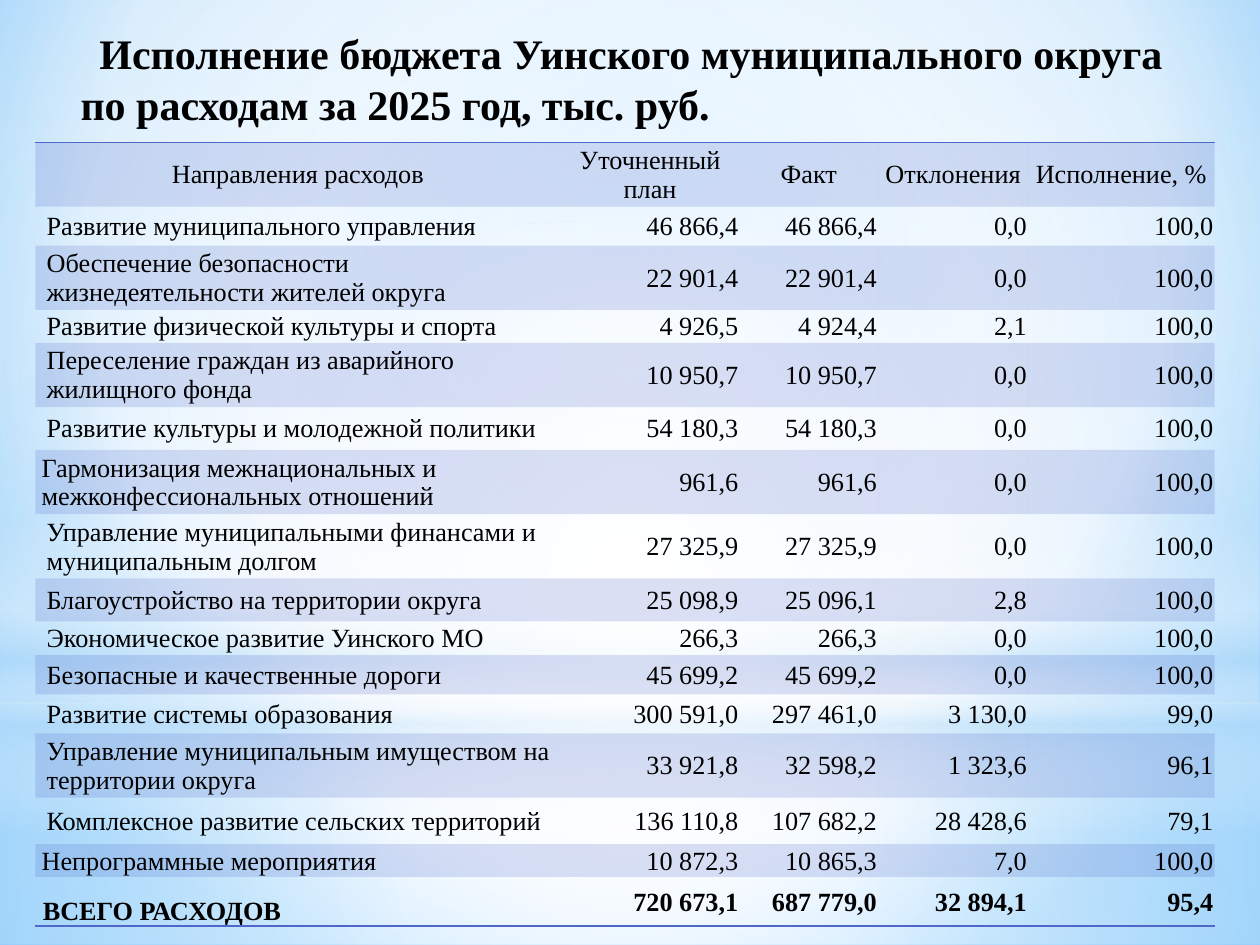
from pptx import Presentation
from pptx.dml.color import RGBColor
from pptx.enum import shapes, text
from pptx.oxml import parse_xml
from pptx.oxml.ns import nsdecls
from pptx.util import Inches, Pt

HEAD = ["Направления расходов", "Уточненный план", "Факт", "Отклонения", "Исполнение, %"]
# height, label indent, label, plan, fact, deviation, percent
ROWS = [
    (0.31, 0.08, "Развитие муниципального управления", "46 866,4", "46 866,4", "0,0", "100,0"),
    (0.51, 0.08, "Обеспечение безопасности жизнедеятельности жителей округа",
     "22 901,4", "22 901,4", "0,0", "100,0"),
    (0.26, 0.08, "Развитие физической культуры и спорта", "4 926,5", "4 924,4", "2,1", "100,0"),
    (0.51, 0.08, "Переселение граждан из аварийного жилищного фонда",
     "10 950,7", "10 950,7", "0,0", "100,0"),
    (0.34, 0.08, "Развитие культуры и молодежной политики", "54 180,3", "54 180,3", "0,0", "100,0"),
    (0.51, 0.04, "Гармонизация межнациональных и межконфессиональных отношений",
     "961,6", "961,6", "0,0", "100,0"),
    (0.51, 0.08, "Управление муниципальными финансами и муниципальным долгом",
     "27 325,9", "27 325,9", "0,0", "100,0"),
    (0.34, 0.08, "Благоустройство на территории округа", "25 098,9", "25 096,1", "2,8", "100,0"),
    (0.27, 0.08, "Экономическое развитие Уинского МО", "266,3", "266,3", "0,0", "100,0"),
    (0.31, 0.08, "Безопасные и качественные дороги", "45 699,2", "45 699,2", "0,0", "100,0"),
    (0.31, 0.08, "Развитие системы образования", "300 591,0", "297 461,0", "3 130,0", "99,0"),
    (0.51, 0.08, "Управление муниципальным имуществом на территории округа",
     "33 921,8", "32 598,2", "1 323,6", "96,1"),
    (0.37, 0.08, "Комплексное развитие сельских территорий",
     "136 110,8", "107 682,2", "28 428,6", "79,1"),
    (0.24, 0.04, "Непрограммные мероприятия", "10 872,3", "10 865,3", "7,0", "100,0"),
    (0.39, 0.05, "ВСЕГО РАСХОДОВ", "720 673,1", "687 779,0", "32 894,1", "95,4"),
]
COLS = [4.17, 1.42, 1.1, 1.19, 1.48]
CENTER = (50, 50, 50, 50)


def color(code):
    return RGBColor.from_string(code)


def tint(code, alpha=100):
    return f'<a:srgbClr val="{code}"><a:alpha val="{alpha * 1000}"/></a:srgbClr>'


def gradient(stops, focus=None):
    """Radial fill around focus (left, top, right, bottom %), or top-down without it."""
    marks = "".join(f'<a:gs pos="{pos * 1000}">{tint(*hue)}</a:gs>' for pos, *hue in stops)
    if focus:
        sides = " ".join(f'{side}="{val * 1000}"' for side, val in zip("ltrb", focus))
        way = f'<a:path path="circle"><a:fillToRect {sides}/></a:path>'
    else:
        way = '<a:lin ang="5400000" scaled="0"/>'
    return parse_xml(f'<a:gradFill {nsdecls("a")} rotWithShape="1">'
                     f'<a:gsLst>{marks}</a:gsLst>{way}</a:gradFill>')


def swap(node, fill):
    """Put fill in place of a solid fill."""
    node.getparent().replace(node, fill)


class Page:
    font, ink, blue = "Times New Roman", "000000", "4E67C8"

    def __init__(self, slide):
        self.slide = slide

    def backdrop(self, stops, focus):
        self.slide.background.fill.solid()
        swap(self.slide._element.xpath(".//p:bg//a:solidFill")[0], gradient(stops, focus))

    def glow(self, kind, top, height, stops, focus=None):
        shape = self.slide.shapes.add_shape(kind, 0, Inches(top), Inches(10), Inches(height))
        shape.shadow.inherit = False
        shape.line.fill.background()
        shape.fill.solid()
        swap(shape._element.xpath("p:spPr/a:solidFill")[0], gradient(stops, focus))

    def style(self, para, size, bold=False):
        font = para.runs[0].font
        font.name, font.size, font.bold = self.font, Pt(size), bold
        font.color.rgb = color(self.ink)

    def indent(self, para, left, first=0):
        props = para._p.get_or_add_pPr()
        props.set("marL", str(Inches(left)))
        props.set("indent", str(Inches(first)))

    def title(self, words):
        box = self.slide.shapes.add_textbox(Inches(0.51), Inches(0.13), Inches(9), Inches(1.02))
        frame = box.text_frame
        frame.word_wrap = True
        frame.margin_left, frame.margin_top = Inches(0.13), Inches(0.09)
        frame.text = words
        para = frame.paragraphs[0]
        self.indent(para, 0, 0.15)
        self.style(para, 24, True)

    def border(self, cell, side):
        line = parse_xml(f'<a:{side} {nsdecls("a")} w="{Pt(1)}"><a:solidFill>'
                         f'{tint(self.blue)}</a:solidFill></a:{side}>')
        cell._tc.get_or_add_tcPr().insert(0, line)

    def cell(self, cell, words, align, band, bold):
        cell.margin_left = cell.margin_right = cell.margin_top = Inches(0.01)
        cell.margin_bottom = 0
        cell.vertical_anchor = text.MSO_ANCHOR.MIDDLE
        cell.text_frame.text = words
        para = cell.text_frame.paragraphs[0]
        para.alignment = align
        self.style(para, 15, bold)
        if band:
            cell.fill.solid()
            cell.fill.fore_color.rgb = color(self.blue)
            swap(cell._tc.tcPr.xpath("a:solidFill/a:srgbClr")[0],
                 parse_xml(tint(self.blue, 20).replace("<a:srgbClr", f'<a:srgbClr {nsdecls("a")}')))
        else:
            cell.fill.background()

    def table(self, left, top, cols, head, rows):
        lines = [(0.51, 0, *head), *rows]
        last = len(lines) - 1
        grid = self.slide.shapes.add_table(
            len(lines), len(cols), Inches(left), Inches(top),
            Inches(sum(cols)), Inches(sum(line[0] for line in lines))).table
        grid.first_row = grid.horz_banding = False
        plain = "{2D5ABB26-0587-4C30-8999-92F81FD0307C}"
        grid._tbl.tblPr.xpath("a:tableStyleId")[0].text = plain
        for col, width in zip(grid.columns, cols):
            col.width = Inches(width)
        for i, (height, inset, *words) in enumerate(lines):
            grid.rows[i].height = Inches(height)
            for j, word in enumerate(words):
                cell = grid.cell(i, j)
                align = (text.PP_ALIGN.CENTER if i == 0
                         else text.PP_ALIGN.RIGHT if j else text.PP_ALIGN.LEFT)
                self.cell(cell, word, align, i % 2 == 0, i == last)
                if i in (0, last):
                    self.border(cell, "lnB" if i else "lnT")
            if i:
                self.indent(grid.cell(i, 0).text_frame.paragraphs[0], inset)
        grid.cell(last, 0).vertical_anchor = text.MSO_ANCHOR.BOTTOM


def main():
    deck = Presentation()
    deck.slide_width, deck.slide_height = Inches(10), Inches(7.5)
    page = Page(deck.slides.add_slide(deck.slide_layouts[6]))
    rect, oval = shapes.MSO_SHAPE.RECTANGLE, shapes.MSO_SHAPE.OVAL
    white, sky = "FFFFFF", "B4DCFA"

    page.backdrop([(0, "9ED5FF"), (69, white), (100, "5BB9FF")], (20, 10, 20, 60))
    page.glow(rect, 5.58, 1.92, [(0, white, 91), (37, white, 76), (100, sky, 79)], CENTER)
    page.glow(rect, 0, 5.58, [(0, white, 89), (48, white, 62), (100, sky, 79)], CENTER)
    page.glow(rect, 4.12, 2.5, [(0, white, 0), (29, white, 30), (45, sky, 40),
                                (55, white, 26), (65, sky, 60), (100, white, 0)])
    page.glow(oval, 1.75, 5.58, [(0, white), (56, white, 0)], CENTER)
    page.title("Исполнение бюджета Уинского муниципального округа "
               "по расходам за 2025 год, тыс. руб.")
    page.table(0.28, 1.13, COLS, HEAD, ROWS)
    deck.save("out.pptx")


if __name__ == "__main__":
    main()
